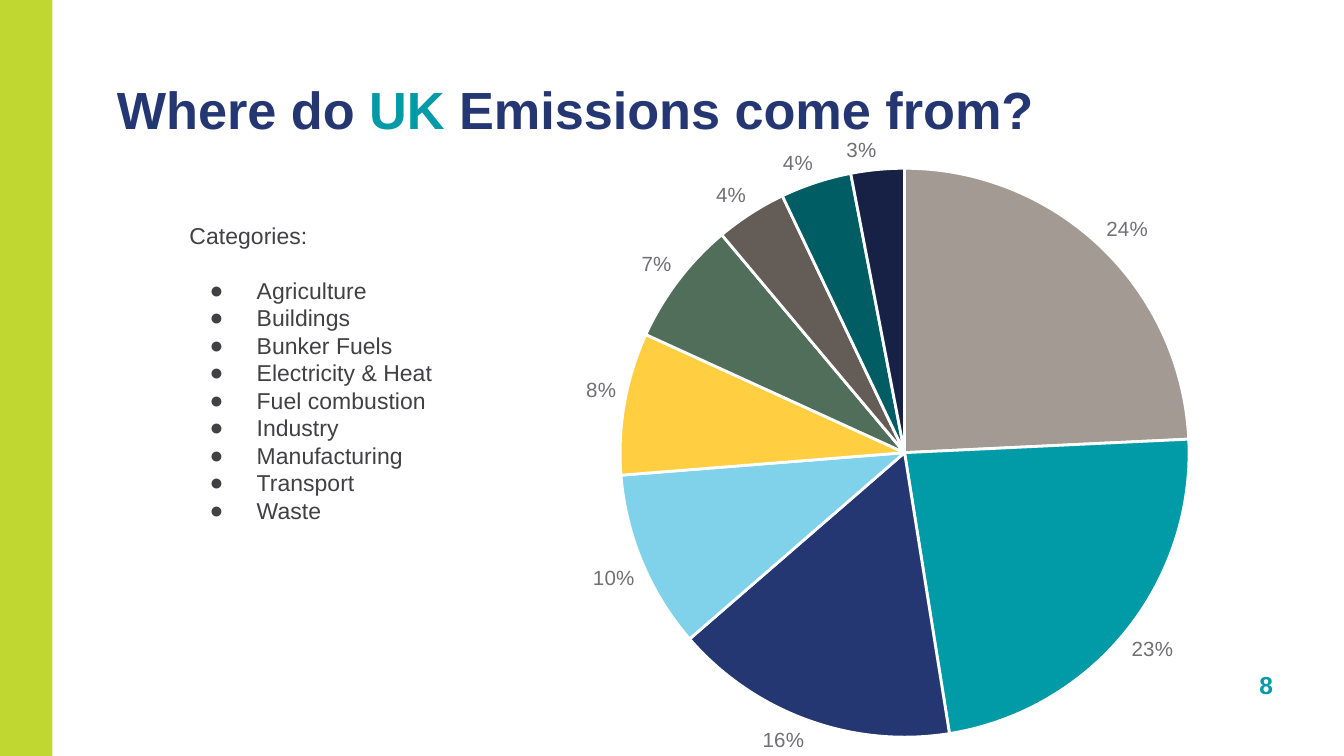
from lxml import etree
from pptx import Presentation
from pptx.chart.data import CategoryChartData
from pptx.dml.color import RGBColor
from pptx.enum.chart import XL_CHART_TYPE as ChartType, XL_LABEL_POSITION as LabelPosition
from pptx.enum.shapes import MSO_SHAPE as Shape
from pptx.enum.text import MSO_ANCHOR as Anchor, MSO_AUTO_SIZE as AutoSize, PP_ALIGN as Align
from pptx.oxml import parse_xml
from pptx.oxml.ns import nsdecls, qn
from pptx.util import Inches, Pt

COLORS = {
    "lime": "C0D631", "teal": "009BA7", "navy": "253773", "text": "414042",
    "label": "706F72", "white": "FFFFFF", "taupe": "A39A94", "sky": "7FD2EA",
    "yellow": "FFCF41", "green": "506E5A", "brown": "645C56",
    "dark teal": "005D64", "midnight": "162145",
}
TITLE = [("Where do ", "navy"), ("UK", "teal"), (" Emissions come from?", "navy")]
CATEGORIES = ["Agriculture", "Buildings", "Bunker Fuels", "Electricity & Heat",
              "Fuel combustion", "Industry", "Manufacturing", "Transport", "Waste"]
SHARES = [(24, "taupe"), (23, "teal"), (16, "navy"), (10, "sky"), (8, "yellow"),
          (7, "green"), (4, "brown"), (4, "dark teal"), (3, "midnight")]


class SlideBuilder:
    """Holds the style and the current slide, and adds each kind of element."""

    font_name = "Arial"
    line_height = Pt(14.7)

    def __init__(self, slide):
        self.slide = slide

    def color(self, name):
        return RGBColor.from_string(COLORS[name])

    def style(self, font, size, color=None, bold=False):
        font.name, font.size, font.bold = self.font_name, Pt(size), bold
        if color:
            font.color.rgb = self.color(color)

    def place(self, shape, box):
        shape.left, shape.top, shape.width, shape.height = map(Inches, box)

    def frame(self, shape, anchor, inset):
        frame = shape.text_frame
        frame.word_wrap, frame.auto_size = True, AutoSize.NONE
        frame.vertical_anchor = anchor
        frame.margin_left = frame.margin_right = Inches(inset)
        frame.margin_top = frame.margin_bottom = Inches(inset)
        return frame

    def bar(self, box, color):
        shape = self.slide.shapes.add_shape(Shape.RECTANGLE, *map(Inches, box))
        shape.shadow.inherit = False
        shape.fill.solid()
        shape.fill.fore_color.rgb = self.color(color)
        shape.line.fill.background()

    def title(self, box, parts):
        shape = self.slide.shapes.title
        self.place(shape, box)
        paragraph = self.frame(shape, Anchor.BOTTOM, 0).paragraphs[0]
        paragraph.alignment = Align.LEFT
        self.style(paragraph.font, 28, bold=True)
        for text, color in parts:
            run = paragraph.add_run()
            run.text = text
            run.font.color.rgb = self.color(color)

    def bullet(self, paragraph, character):
        properties = paragraph._p.get_or_add_pPr()
        properties.set("marL", str(Inches(0.5 if character else 0)))
        properties.set("indent", str(Inches(-0.35 if character else 0)))
        if character:
            tint = etree.SubElement(properties, qn("a:buClr"))
            etree.SubElement(tint, qn("a:srgbClr"), val=COLORS["text"])
            etree.SubElement(properties, qn("a:buChar"), char=character)
        else:
            etree.SubElement(properties, qn("a:buNone"))

    def bullet_list(self, box, heading, items):
        shape = self.slide.placeholders[1]
        self.place(shape, box)
        frame = self.frame(shape, Anchor.TOP, 0.1)
        for index, text in enumerate([heading, *items]):
            paragraph = frame.add_paragraph() if index else frame.paragraphs[0]
            paragraph.text = text
            paragraph.line_spacing = self.line_height
            paragraph.space_before = Pt(0)
            paragraph.space_after = Pt(0) if index else self.line_height
            self.bullet(paragraph, "●" if index else None)
            self.style(paragraph.font, 12.3, "text")

    def pie(self, box, shares):
        data = CategoryChartData()
        data.categories = [str(number) for number in range(1, len(shares) + 1)]
        data.add_series("Series 1", [value for value, _ in shares])
        chart = self.slide.shapes.add_chart(ChartType.PIE, *map(Inches, box), data).chart
        chart.has_legend = chart.has_title = False
        self.style(chart.font, 10, "text")
        plot = chart.plots[0]
        plot.vary_by_categories = True
        for index, (_, color) in enumerate(shares):
            slice_format = plot.series[0].points[index].format
            slice_format.fill.solid()
            slice_format.fill.fore_color.rgb = self.color(color)
            slice_format.line.color.rgb = self.color("white")
            slice_format.line.width = Pt(1.5)
        plot.has_data_labels = True
        labels = plot.data_labels
        labels.show_percentage, labels.show_value = True, False
        labels.number_format, labels.number_format_is_linked = "0%", False
        labels.position = LabelPosition.OUTSIDE_END
        self.style(labels.font, 11, "label")
        self.plot_layout(chart, x=0.2, y=0.07, w=0.63, h=0.87)

    def plot_layout(self, chart, **fractions):
        area = chart._chartSpace.chart.plotArea
        for layout in area.findall(qn("c:layout")):
            area.remove(layout)
        sizes = "".join(f'<c:{key} val="{value}"/>' for key, value in fractions.items())
        area.insert(0, parse_xml(
            f'<c:layout {nsdecls("c")}><c:manualLayout><c:layoutTarget val="inner"/>'
            f'<c:xMode val="edge"/><c:yMode val="edge"/>{sizes}</c:manualLayout></c:layout>'))

    def page_number(self, box, number):
        shape = self.slide.shapes.add_textbox(*map(Inches, box))
        frame = self.frame(shape, Anchor.BOTTOM, 0.1)
        frame.margin_top = frame.margin_bottom = Inches(0.05)
        paragraph = frame.paragraphs[0]
        paragraph.text = str(number)
        paragraph.alignment = Align.RIGHT
        self.style(paragraph.font, 13.1, "teal", bold=True)


def main():
    presentation = Presentation()
    presentation.slide_width = Inches(10)
    presentation.slide_height = presentation.slide_width * 9 // 16
    slide = presentation.slides.add_slide(presentation.slide_layouts[1])
    builder = SlideBuilder(slide)
    builder.bar((-0.12, -0.04, 0.51, 5.71), "lime")
    builder.page_number((8.78, 4.93, 0.79, 0.32), 8)
    builder.bullet_list((1.31, 1.55, 2.29, 2.79), "Categories:", CATEGORIES)
    builder.title((0.87, 0.61, 7.13, 0.43), TITLE)
    builder.pie((3.27, 0.89, 6.72, 4.91), SHARES)
    presentation.save("out.pptx")


if __name__ == "__main__":
    main()
